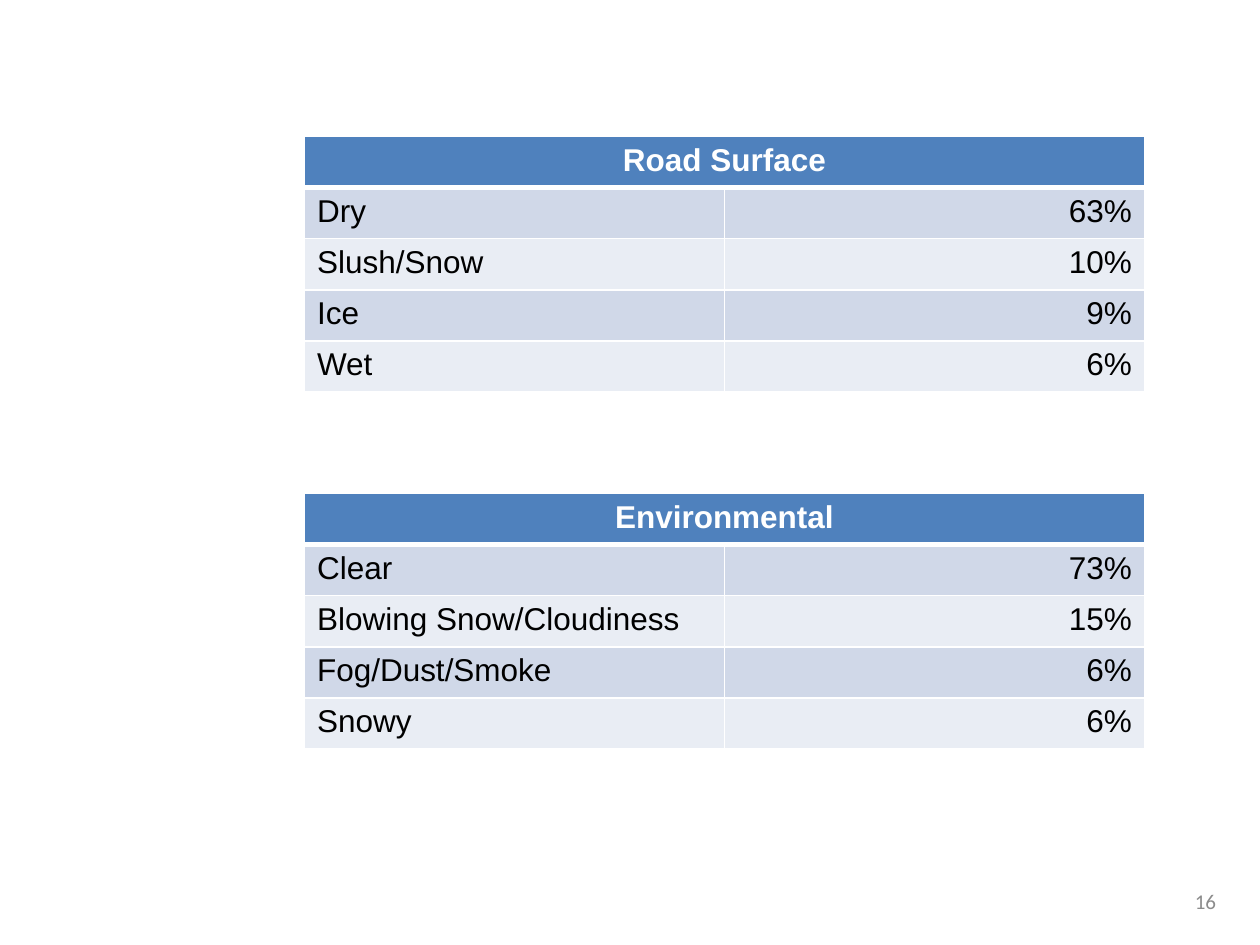
import pptx
import pptx.dml.color
import pptx.enum.text
import pptx.oxml
import pptx.oxml.ns
import pptx.util

Pt = pptx.util.Pt
ALIGN = pptx.enum.text.PP_ALIGN
MIDDLE = pptx.enum.text.MSO_ANCHOR.MIDDLE


def color(hex_string):
    return pptx.dml.color.RGBColor.from_string(hex_string)


class SlideBuilder:
    header_fill = "4F81BD"
    band_fills = ("D0D8E8", "E9EDF4")
    border = "FFFFFF"
    thin, thick = 1, 3
    row_height = 29.2

    def __init__(self, slide):
        self.slide = slide

    def add_text(self, frame, text, size, font, ink, align, bold=False):
        paragraph = frame.paragraphs[0]
        paragraph.alignment = align
        run = paragraph.add_run()
        run.text = text
        run.font.size = Pt(size)
        run.font.name = font
        run.font.bold = bold
        run.font.color.rgb = color(ink)

    def page_number(self, text, left, top, width, height):
        frame = self.slide.shapes.add_textbox(
            Pt(left), Pt(top), Pt(width), Pt(height)).text_frame
        frame.word_wrap = True
        frame.vertical_anchor = MIDDLE
        self.add_text(frame, text, 12, "Calibri", "8C8C8C", ALIGN.RIGHT)

    def style_cell(self, cell, fill, top, bottom):
        """Set borders before the fill, as the schema orders them."""
        properties = cell._tc.get_or_add_tcPr()
        widths = {"L": self.thin, "R": self.thin, "T": top, "B": bottom}
        for side, width in widths.items():
            properties.append(pptx.oxml.parse_xml(
                f'<a:ln{side} {pptx.oxml.ns.nsdecls("a")} w="{Pt(width)}">'
                f'<a:solidFill><a:srgbClr val="{self.border}"/></a:solidFill>'
                f'</a:ln{side}>'))
        cell.fill.solid()
        cell.fill.fore_color.rgb = color(fill)

    def share_table(self, heading, shares, left, top, width):
        """Add a table of conditions and percentages under a merged heading."""
        row_count = len(shares) + 1
        table = self.slide.shapes.add_table(
            row_count, 2, Pt(left), Pt(top), Pt(width),
            Pt(self.row_height * row_count)).table
        for row in table.rows:
            row.height = Pt(self.row_height)

        for cell in table.rows[0].cells:
            self.style_cell(cell, self.header_fill, self.thin, self.thick)
        title = table.cell(0, 0)
        title.merge(table.cell(0, 1))
        self.add_text(title.text_frame, heading, 18, "Arial", "FFFFFF",
                      ALIGN.CENTER, bold=True)

        for index, (condition, percent) in enumerate(shares):
            upper = self.thick if index == 0 else self.thin
            entries = ((condition, ALIGN.LEFT), (f"{percent}%", ALIGN.RIGHT))
            for column, (text, align) in enumerate(entries):
                cell = table.cell(index + 1, column)
                self.style_cell(cell, self.band_fills[index % 2], upper, self.thin)
                self.add_text(cell.text_frame, text, 18, "Arial", "000000", align)


def main():
    deck = pptx.Presentation()
    deck.slide_width, deck.slide_height = Pt(720), Pt(540)
    builder = SlideBuilder(deck.slides.add_slide(deck.slide_layouts[6]))

    builder.page_number("16", 618, 500.4, 84, 28.8)
    road_surface = [("Dry", 63), ("Slush/Snow", 10), ("Ice", 9), ("Wet", 6)]
    environmental = [("Clear", 73), ("Blowing Snow/Cloudiness", 15),
                     ("Fog/Dust/Smoke", 6), ("Snowy", 6)]
    builder.share_table("Road Surface", road_surface, 174, 78, 480)
    builder.share_table("Environmental", environmental, 174, 282, 480)

    deck.save("out.pptx")


if __name__ == "__main__":
    main()
